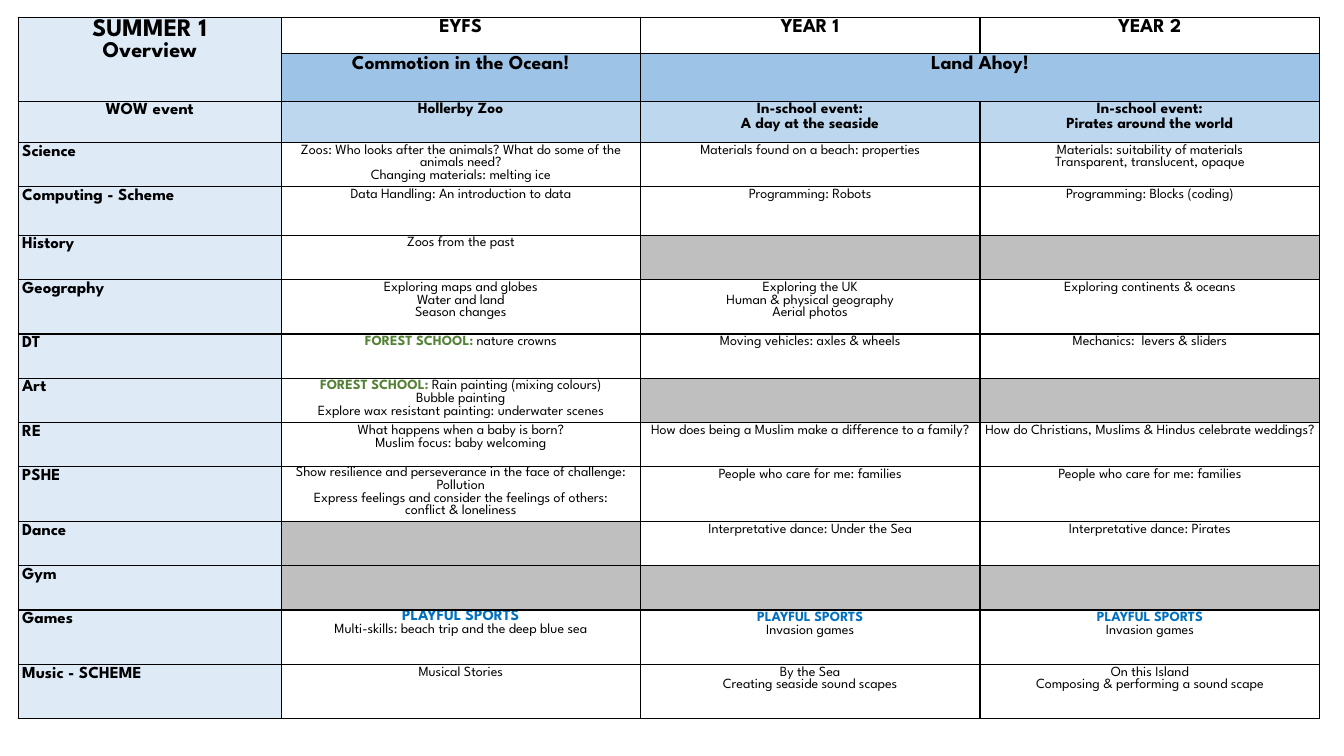
"""Build the Summer 1 curriculum overview as one table slide."""
from typing import NamedTuple, Optional

from lxml.etree import SubElement
from pptx import Presentation
from pptx.dml.color import RGBColor
from pptx.enum.text import PP_ALIGN
from pptx.oxml.ns import qn
from pptx.table import _Cell
from pptx.util import Inches, Pt

UNIT = Inches(0.01)
WIDE, HIGH = 1333, 750
LEFT, TOP = 18, 17
COLS = (261, 356, 337, 337)
HEADS = (36, 47, 41)
FACE = "League Spartan"

BLACK = RGBColor(0x00, 0x00, 0x00)
GREEN = RGBColor(0x54, 0x82, 0x35)
BLUE = RGBColor(0x00, 0x70, 0xC0)
PALE = RGBColor(0xDE, 0xEB, 0xF7)
SKY = RGBColor(0xBD, 0xD7, 0xEE)
DEEP = RGBColor(0x9D, 0xC3, 0xE6)
GREY = RGBColor(0xBF, 0xBF, 0xBF)

ACCENTS = {"FOREST SCHOOL:": GREEN, "PLAYFUL SPORTS": BLUE}


class Look(NamedTuple):
    """Style of a cell: point size of each line, weight, fill and side."""
    sizes: tuple[int, ...]
    bold: bool = True
    fill: Optional[RGBColor] = None
    side: PP_ALIGN = PP_ALIGN.CENTER


class Topic(NamedTuple):
    """A subject row: its name, height and text for each class."""
    name: str
    high: int
    texts: tuple[Optional[str], Optional[str], Optional[str]]
    inset: bool = False


TITLE = Look((18, 16), fill=PALE)
YEAR = Look((14,))
THEME = Look((14,), fill=DEEP)
WOW = Look((12,), fill=PALE)
EVENT = Look((11,), fill=SKY)
NAME = Look((12,), fill=PALE, side=PP_ALIGN.LEFT)
BODY = Look((10,), bold=False)
LEAD = Look((11, 10), bold=False)
BLANK = Look((10,), bold=False, fill=GREY)

HEADING = (
    (("SUMMER 1\nOverview", TITLE), ("EYFS", YEAR), ("YEAR 1", YEAR), ("YEAR 2", YEAR)),
    (("", TITLE), ("Commotion in the Ocean!", THEME), ("Land Ahoy!", THEME), ("", THEME)),
    (("WOW event", WOW), ("Hollerby Zoo", EVENT),
     ("In-school event:\nA day at the seaside", EVENT),
     ("In-school event:\nPirates around the world", EVENT)),
)

TOPICS = (
    Topic("Science", 44, (
        "Zoos: Who looks after the animals? What do some of the animals need?\n"
        "Changing materials: melting ice",
        "Materials found on a beach: properties",
        "Materials: suitability of materials\nTransparent, translucent, opaque")),
    Topic("Computing - Scheme", 48, (
        "Data Handling: An introduction to data",
        "Programming: Robots",
        "Programming: Blocks (coding)")),
    Topic("History", 44, ("Zoos from the past", None, None)),
    Topic("Geography", 54, (
        "Exploring maps and globes\nWater and land\nSeason changes",
        "Exploring the UK\nHuman & physical geography\nAerial photos",
        "Exploring continents & oceans")),
    Topic("DT", 44, (
        "FOREST SCHOOL: nature crowns",
        "Moving vehicles: axles & wheels",
        "Mechanics:  levers & sliders")),
    Topic("Art", 44, (
        "FOREST SCHOOL: Rain painting (mixing colours)\nBubble painting\n"
        "Explore wax resistant painting: underwater scenes", None, None)),
    Topic("RE", 44, (
        "What happens when a baby is born?\nMuslim focus: baby welcoming",
        "How does being a Muslim make a difference to a family?",
        "How do Christians, Muslims & Hindus celebrate weddings?")),
    Topic("PSHE", 54, (
        "Show resilience and perseverance in the face of challenge: Pollution\n"
        "Express feelings and consider the feelings of others: conflict & loneliness",
        "People who care for me: families",
        "People who care for me: families"), inset=True),
    Topic("Dance", 44, (
        None, "Interpretative dance: Under the Sea", "Interpretative dance: Pirates")),
    Topic("Gym", 44, (None, None, None)),
    Topic("Games", 54, (
        "PLAYFUL SPORTS\nMulti-skills: beach trip and the deep blue sea",
        "PLAYFUL SPORTS\nInvasion games",
        "PLAYFUL SPORTS\nInvasion games"), inset=True),
    Topic("Music - SCHEME", 54, (
        "Musical Stories",
        "By the Sea\nCreating seaside sound scapes",
        "On this Island\nComposing & performing a sound scape")),
)


def edge(cell: _Cell) -> None:
    """Draw a thin black line on all four sides of a cell."""
    props = cell._tc.get_or_add_tcPr()
    for tag in ("a:lnL", "a:lnR", "a:lnT", "a:lnB"):
        line = SubElement(props, qn(tag), w=str(Pt(1)))
        paint = SubElement(line, qn("a:solidFill"))
        SubElement(paint, qn("a:srgbClr"), val=str(BLACK))


def write(cell: _Cell, text: str, look: Look, inset: bool = False) -> None:
    """Style a cell and fill it with text, picking out accent phrases."""
    edge(cell)
    if look.fill is None:
        cell.fill.background()
    else:
        cell.fill.solid()
        cell.fill.fore_color.rgb = look.fill
    cell.margin_left = cell.margin_right = UNIT * (12 if inset else 4)
    cell.margin_top = cell.margin_bottom = UNIT * (0 if inset else 2)
    for num, line in enumerate(text.split("\n")):
        frame = cell.text_frame
        para = frame.add_paragraph() if num else frame.paragraphs[0]
        para.alignment = look.side
        font = para.font
        font.name, font.bold = FACE, look.bold
        font.size = Pt(look.sizes[min(num, len(look.sizes) - 1)])
        font.color.rgb = BLACK
        for phrase, tint in ACCENTS.items():
            if line.startswith(phrase):
                run = para.add_run()
                run.text = phrase
                run.font.bold = True
                run.font.color.rgb = tint
                line = line.removeprefix(phrase)
        if line:
            para.add_run().text = line


def main() -> None:
    """Lay out the table and save the deck."""
    deck = Presentation()
    deck.slide_width, deck.slide_height = UNIT * WIDE, UNIT * HIGH
    slide = deck.slides.add_slide(deck.slide_layouts[6])
    rows = HEADS + tuple(topic.high for topic in TOPICS)
    table = slide.shapes.add_table(
        len(rows), len(COLS), UNIT * LEFT, UNIT * TOP,
        UNIT * sum(COLS), UNIT * sum(rows)).table
    table.first_row = table.horz_banding = False
    for col, wide in zip(table.columns, COLS):
        col.width = UNIT * wide
    for row, high in zip(table.rows, rows):
        row.height = UNIT * high
    for top, cells in enumerate(HEADING):
        for col, (text, look) in enumerate(cells):
            write(table.cell(top, col), text, look)
    for top, topic in enumerate(TOPICS, len(HEADING)):
        write(table.cell(top, 0), topic.name, NAME)
        for col, text in enumerate(topic.texts, 1):
            first = topic.inset and col == 1
            look = BLANK if text is None else LEAD if first and topic.name == "Games" else BODY
            write(table.cell(top, col), text or "", look, first)
    table.cell(0, 0).merge(table.cell(1, 0))
    table.cell(1, 2).merge(table.cell(1, 3))
    deck.save("out.pptx")


if __name__ == "__main__":
    main()
